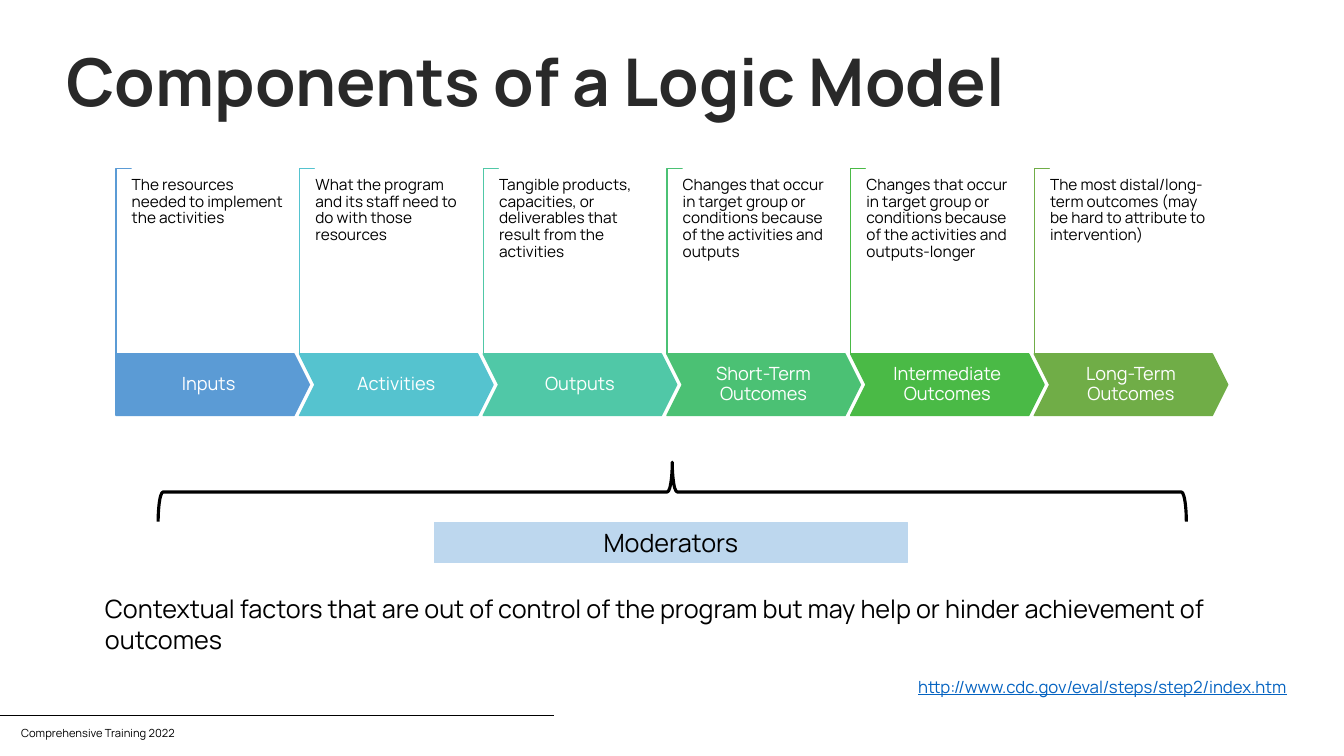
"""Build a slide showing the components of a logic model."""
import pptx
import pptx.dml.color
import pptx.enum.shapes
import pptx.enum.text
import pptx.oxml.ns
import pptx.util
from lxml import etree

Pt = pptx.util.Pt
SHAPES = pptx.enum.shapes.MSO_SHAPE
ALIGN = pptx.enum.text.PP_ALIGN
ANCHOR = pptx.enum.text.MSO_ANCHOR

STAGES = [
    ("Inputs", "5B9BD5", "The resources needed to implement the activities"),
    ("Activities", "55C3CF",
     "What the program and its staff need to do with those resources"),
    ("Outputs", "50C8A7",
     "Tangible products, capacities, or deliverables that result from the activities"),
    ("Short-Term Outcomes", "4BC174",
     "Changes that occur in target group or conditions because of the activities and outputs"),
    ("Intermediate Outcomes", "4ABA46",
     "Changes that occur in target group or conditions because of the activities "
     "and outputs-longer"),
    ("Long-Term Outcomes", "70AD47",
     "The most distal/long-term outcomes (may be hard to attribute to intervention)"),
]


def color(value):
    return pptx.dml.color.RGBColor.from_string(value)


def write(shape, text, size=18, ink="000000", bold=False, underline=False,
          align=ALIGN.LEFT, anchor=ANCHOR.TOP, spacing=1.0, insets=(7.2, 3.6)):
    frame = shape.text_frame
    frame.word_wrap = True
    frame.vertical_anchor = anchor
    frame.margin_left = frame.margin_right = Pt(insets[0])
    frame.margin_top = frame.margin_bottom = Pt(insets[1])
    para = frame.paragraphs[0]
    para.alignment = align
    para.line_spacing = spacing
    span = para.add_run()
    span.text = text
    span.font.name = "Manrope"
    span.font.size = Pt(size)
    span.font.bold = bold
    span.font.underline = underline
    span.font.color.rgb = color(ink)


class Slide:
    def __init__(self, deck):
        self.page = deck.slides.add_slide(deck.slide_layouts[6])

    def text(self, left, top, width, height, text, **style):
        box = self.page.shapes.add_textbox(Pt(left), Pt(top), Pt(width), Pt(height))
        write(box, text, **style)

    def shape(self, kind, left, top, width, height, line, fill=None,
              weight=1, rotation=0, adjustments=()):
        shape = self.page.shapes.add_shape(kind, Pt(left), Pt(top), Pt(width), Pt(height))
        shape.shadow.inherit = False
        shape.rotation = rotation
        for index, value in enumerate(adjustments):
            shape.adjustments[index] = value
        if fill:
            shape.fill.solid()
            shape.fill.fore_color.rgb = color(fill)
        else:
            shape.fill.background()
        shape.line.color.rgb = color(line)
        shape.line.width = Pt(weight)
        return shape

    def line(self, left, top, right, bottom, ink, weight):
        line = self.page.shapes.add_connector(
            pptx.enum.shapes.MSO_CONNECTOR.STRAIGHT, Pt(left), Pt(top), Pt(right), Pt(bottom))
        line.line.color.rgb = color(ink)
        line.line.width = Pt(weight)
        etree.SubElement(line._element.spPr, pptx.oxml.ns.qn("a:effectLst"))

    def stage(self, index, label, ink, detail):
        left = 82.8 + 131.2 * index
        arrow_top, arrow_width, arrow_height = 252.8, 138.2, 44
        rail_length, rail_width = 132.5, 10.8
        self.shape(SHAPES.CORNER, left + (rail_width - rail_length) / 2,
                   arrow_top - (rail_length + rail_width) / 2, rail_length, rail_width,
                   ink, "FFFFFF", rotation=90, adjustments=(0.01, 0.01))
        kind = SHAPES.CHEVRON if index else SHAPES.PENTAGON
        self.shape(kind, left, arrow_top, arrow_width, arrow_height, ink, ink,
                   adjustments=(0.25,))
        label_left, label_width = (left + 11, 116) if index else (left, 132.5)
        self.text(label_left, arrow_top, label_width, arrow_height, label, size=13,
                  ink="FFFFFF", align=ALIGN.CENTER, anchor=ANCHOR.MIDDLE,
                  spacing=0.9, insets=(13, 6.5))
        self.text(left + 11.3, 126.7, 112.3, 119.5 if index < 3 else 87.8, detail,
                  size=11, spacing=0.9, insets=(0, 0))


def main():
    deck = pptx.Presentation()
    deck.slide_width, deck.slide_height = Pt(960), Pt(540)
    slide = Slide(deck)
    slide.text(8, 515, 316, 17, "Comprehensive Training 2022", size=8)
    slide.line(0, 511.2, 396, 511.2, "000000", 0.5)
    slide.text(40.3, 28.8, 828, 61.2, "Components of a Logic Model", size=47,
               ink="292929", bold=True, anchor=ANCHOR.BOTTOM, spacing=0.9)
    for index, stage in enumerate(STAGES):
        slide.stage(index, *stage)
    slide.shape(SHAPES.LEFT_BRACE, 458.9, -15.8, 42.5, 734.4, "000000",
                weight=2.25, rotation=90)
    moderators = slide.shape(SHAPES.RECTANGLE, 310.3, 373, 337.7, 29,
                             "BDD7EE", "BDD7EE", weight=0.75)
    write(moderators, "Moderators", align=ALIGN.CENTER)
    slide.text(67.9, 420.5, 823.7, 51,
               "Contextual factors that are out of control of the program "
               "but may help or hinder achievement of outcomes")
    slide.text(648.7, 479.5, 301, 21.8, "http://www.cdc.gov/eval/steps/step2/index.htm",
               size=12, ink="0563C1", underline=True)
    deck.save("out.pptx")


if __name__ == "__main__":
    main()
